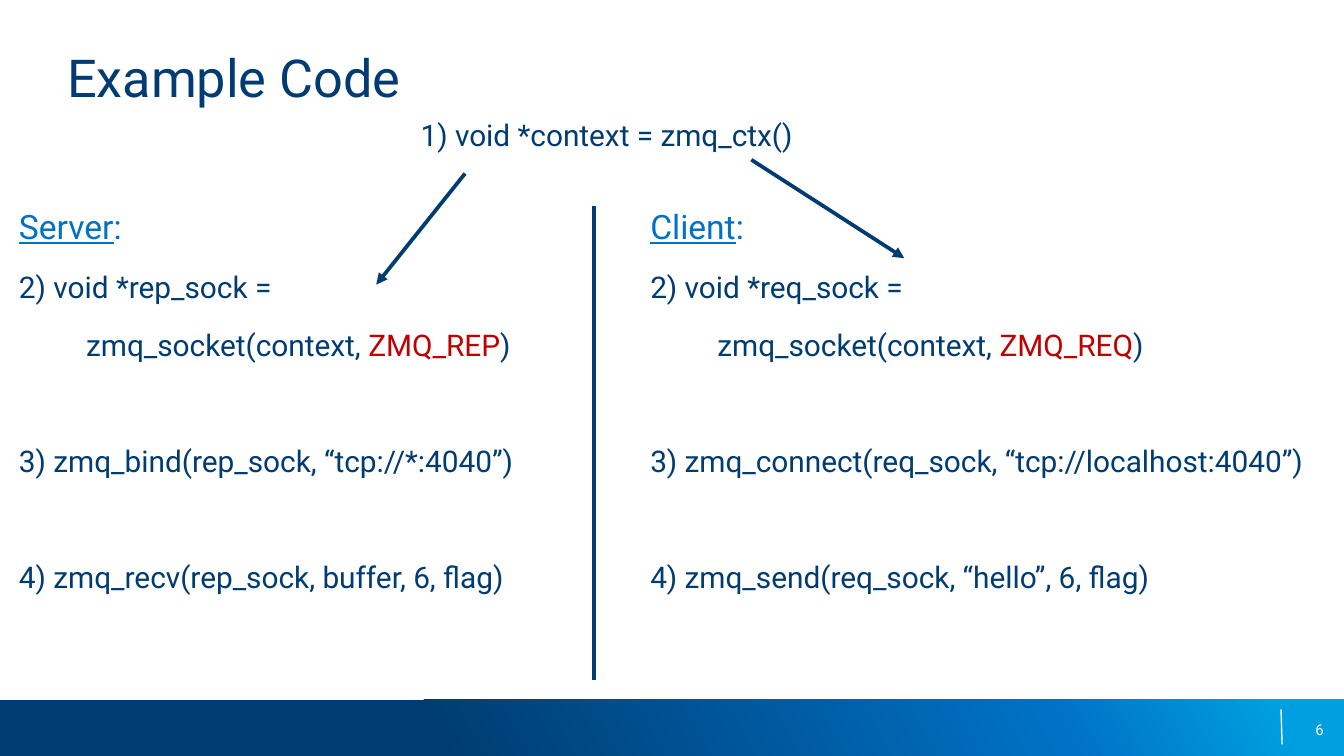
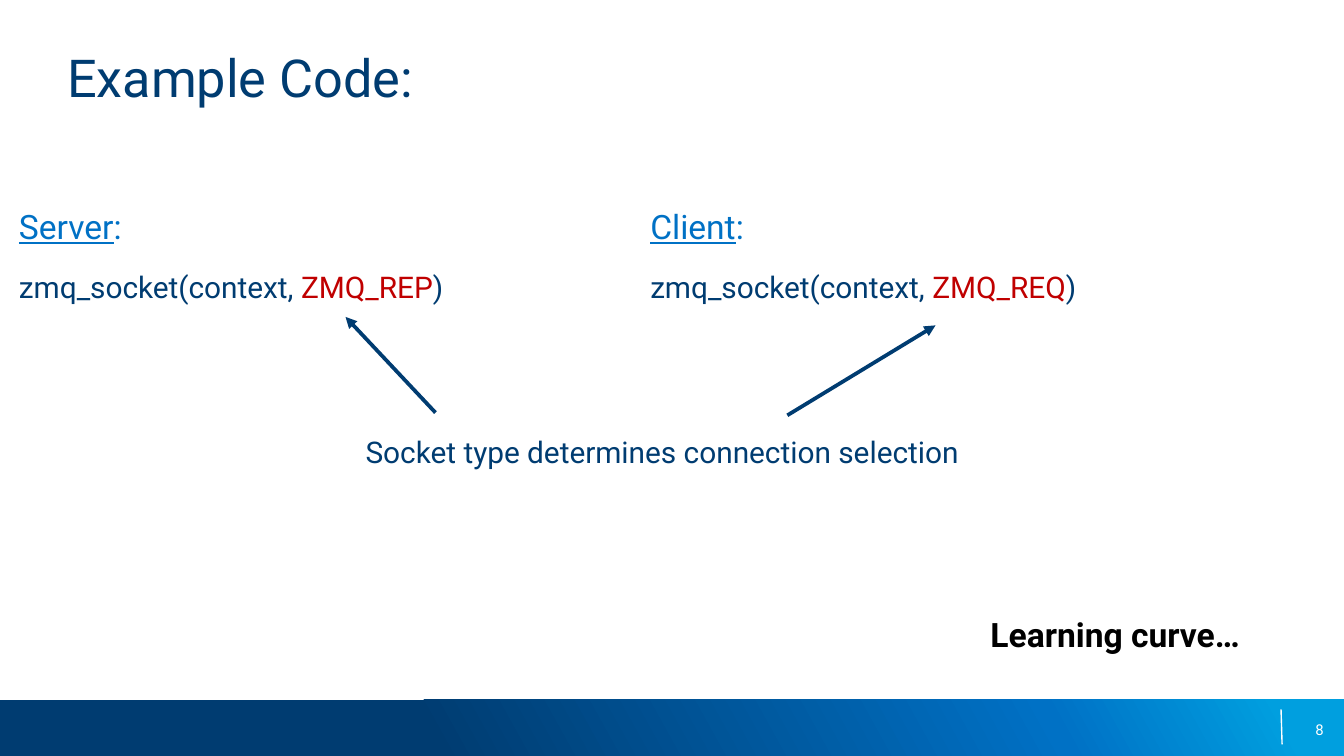
"""Build two slides of socket example code for a server and a client."""
import copy

import pptx
import pptx.dml.color
import pptx.enum.shapes
import pptx.enum.text
import pptx.oxml
import pptx.oxml.ns
import pptx.util
from pptx.util import Cm

RGBColor = pptx.dml.color.RGBColor
NAVY = RGBColor(0x00, 0x3C, 0x71)
BLUE = RGBColor(0x00, 0x71, 0xC5)
SKY = RGBColor(0x00, 0x9F, 0xDF)
RED = RGBColor(0xC0, 0x00, 0x00)
WHITE = RGBColor(0xFF, 0xFF, 0xFF)
BLACK = RGBColor(0x00, 0x00, 0x00)

FONT = "Roboto"
BAND_STOPS = ((0.32, NAVY), (0.78, BLUE), (0.95, SKY))
COLUMN_TOP = Cm(3.89)
SERVER_COLUMN = (Cm(0.36), COLUMN_TOP, Cm(12.34), Cm(8.61))
CLIENT_COLUMN = (Cm(12.29), COLUMN_TOP, Cm(12.95), Cm(8.97))
LINE_GAP = 12
STEP_GAP = 43
CALL_INDENT = Cm(1.27)


def write_text(paragraph, text, size=16, color=NAVY, bold=False, underline=False):
    """Append one formatted run to a paragraph."""
    run = paragraph.add_run()
    run.text = text
    font = run.font
    font.name = FONT
    font.size = pptx.util.Pt(size)
    font.color.rgb = color
    font.bold = bold
    font.underline = underline


def prepare_frame(shape, anchor=pptx.enum.text.MSO_ANCHOR.TOP):
    """Remove the margins of a text frame and return its first paragraph."""
    frame = shape.text_frame
    frame.margin_left = frame.margin_top = frame.margin_right = frame.margin_bottom = 0
    frame.word_wrap = True
    frame.auto_size = pptx.enum.text.MSO_AUTO_SIZE.NONE
    frame.vertical_anchor = anchor
    return frame.paragraphs[0]


def add_label(slide, text, left, top, width, height, **text_format):
    """Add a text box that holds one run."""
    box = slide.shapes.add_textbox(left, top, width, height)
    write_text(prepare_frame(box), text, **text_format)


def add_line(slide, start, end, color=NAVY, width=2, arrow=False):
    """Draw a straight line, with an arrowhead at its end on request."""
    line = slide.shapes.add_connector(
        pptx.enum.shapes.MSO_CONNECTOR.STRAIGHT, *start, *end)
    line.line.color.rgb = color
    line.line.width = pptx.util.Pt(width)
    if arrow:
        head = pptx.oxml.ns.qn("a:tailEnd")
        line.line._get_or_add_ln().append(
            line._element.makeelement(head, {"type": "triangle"}))
    properties = line._element.spPr
    properties.append(properties.makeelement(pptx.oxml.ns.qn("a:effectLst"), {}))


def add_arrow(slide, start, end):
    """Draw an arrow between two points."""
    add_line(slide, start, end, arrow=True)


def add_footer(slide, number):
    """Add the gradient band, its divider and the slide number."""
    band = slide.shapes.add_shape(
        pptx.enum.shapes.MSO_SHAPE.RECTANGLE, 0, Cm(13.23), Cm(25.4), Cm(1.06))
    band.shadow.inherit = False
    band.line.fill.background()
    band.fill.gradient()
    band.fill.gradient_angle = 29
    stop_list = band._element.spPr.find(".//" + pptx.oxml.ns.qn("a:gsLst"))
    stop_list.append(copy.deepcopy(stop_list[0]))
    for stop, (position, color) in zip(band.fill.gradient_stops, BAND_STOPS):
        stop.position = position
        stop.color.rgb = color
    add_line(slide, (Cm(24.21), Cm(13.41)), (Cm(24.23), Cm(14.07)), WHITE, 0.75)
    box = slide.shapes.add_textbox(Cm(19.1), Cm(13.41), Cm(5.92), Cm(0.76))
    paragraph = prepare_frame(box, pptx.enum.text.MSO_ANCHOR.MIDDLE)
    paragraph.alignment = pptx.enum.text.PP_ALIGN.RIGHT
    write_text(paragraph, str(number), size=8, color=WHITE)


def add_slide(presentation, title, number):
    """Add a slide with its title and footer."""
    slide = presentation.slides.add_slide(presentation.slide_layouts[5])
    add_footer(slide, number)
    shape = slide.shapes.title
    shape.left, shape.top, shape.width, shape.height = (
        Cm(1.27), Cm(0.86), Cm(22.86), Cm(2.41))
    paragraph = prepare_frame(shape)
    paragraph.alignment = pptx.enum.text.PP_ALIGN.LEFT
    write_text(paragraph, title, size=28)
    return slide


def add_code_line(frame, gap, indent=0):
    """Add a paragraph below the last one, with a gap and an indent."""
    paragraph = frame.add_paragraph()
    paragraph.space_before = pptx.util.Pt(gap)
    if indent:
        paragraph._p.get_or_add_pPr().set("marL", str(indent))
    return paragraph


def add_code_column(slide, place, heading, socket_type, declaration=None, steps=()):
    """Add a heading, the socket call and the steps around it."""
    frame = slide.shapes.add_textbox(*place).text_frame
    paragraph = prepare_frame(frame._parent)
    write_text(paragraph, heading, size=18, color=BLUE, underline=True)
    write_text(paragraph, ":", size=18, color=BLUE)
    if declaration:
        write_text(add_code_line(frame, LINE_GAP), declaration)
    call = add_code_line(frame, LINE_GAP, CALL_INDENT if declaration else 0)
    write_text(call, "zmq_socket(context, ")
    write_text(call, socket_type, color=RED)
    write_text(call, ")")
    for step in steps:
        write_text(add_code_line(frame, STEP_GAP), step)


def build_steps_slide(presentation):
    """Build the slide with the steps of both sides."""
    slide = add_slide(presentation, "Example Code", 6)
    add_code_column(
        slide, SERVER_COLUMN, "Server", "ZMQ_REP", "2) void *rep_sock =",
        ("3) zmq_bind(rep_sock, “tcp://*:4040”)",
         "4) zmq_recv(rep_sock, buffer, 6, flag)"))
    add_code_column(
        slide, CLIENT_COLUMN, "Client", "ZMQ_REQ", "2) void *req_sock =",
        ("3) zmq_connect(req_sock, “tcp://localhost:4040”)",
         "4) zmq_send(req_sock, “hello”, 6, flag)"))
    add_line(slide, (Cm(11.23), COLUMN_TOP), (Cm(11.23), Cm(12.85)))
    add_label(slide, "1) void *context = zmq_ctx()",
              Cm(7.95), Cm(2.21), Cm(7.29), Cm(1.63))
    add_arrow(slide, (Cm(8.79), Cm(3.28)), (Cm(7.11), Cm(5.38)))
    add_arrow(slide, (Cm(14.2), Cm(3.02)), (Cm(17.09), Cm(4.88)))


def build_socket_type_slide(presentation):
    """Build the slide that compares the two socket types."""
    slide = add_slide(presentation, "Example Code:", 8)
    add_code_column(slide, SERVER_COLUMN, "Server", "ZMQ_REP")
    add_code_column(slide, CLIENT_COLUMN, "Client", "ZMQ_REQ")
    add_label(slide, "Socket type determines connection selection",
              Cm(6.91), Cm(8.2), Cm(11.58), Cm(0.69))
    add_arrow(slide, (Cm(8.23), Cm(7.8)), (Cm(6.53), Cm(5.99)))
    add_arrow(slide, (Cm(14.88), Cm(7.85)), (Cm(17.68), Cm(6.15)))
    add_label(slide, "Learning curve…", Cm(18.72), Cm(11.61), Cm(5.41), Cm(1.24),
              size=18, color=BLACK, bold=True)


def main():
    """Build and save the presentation."""
    presentation = pptx.Presentation()
    presentation.slide_width = Cm(25.4)
    presentation.slide_height = Cm(14.29)
    build_steps_slide(presentation)
    build_socket_type_slide(presentation)
    presentation.save("out.pptx")


if __name__ == "__main__":
    main()
